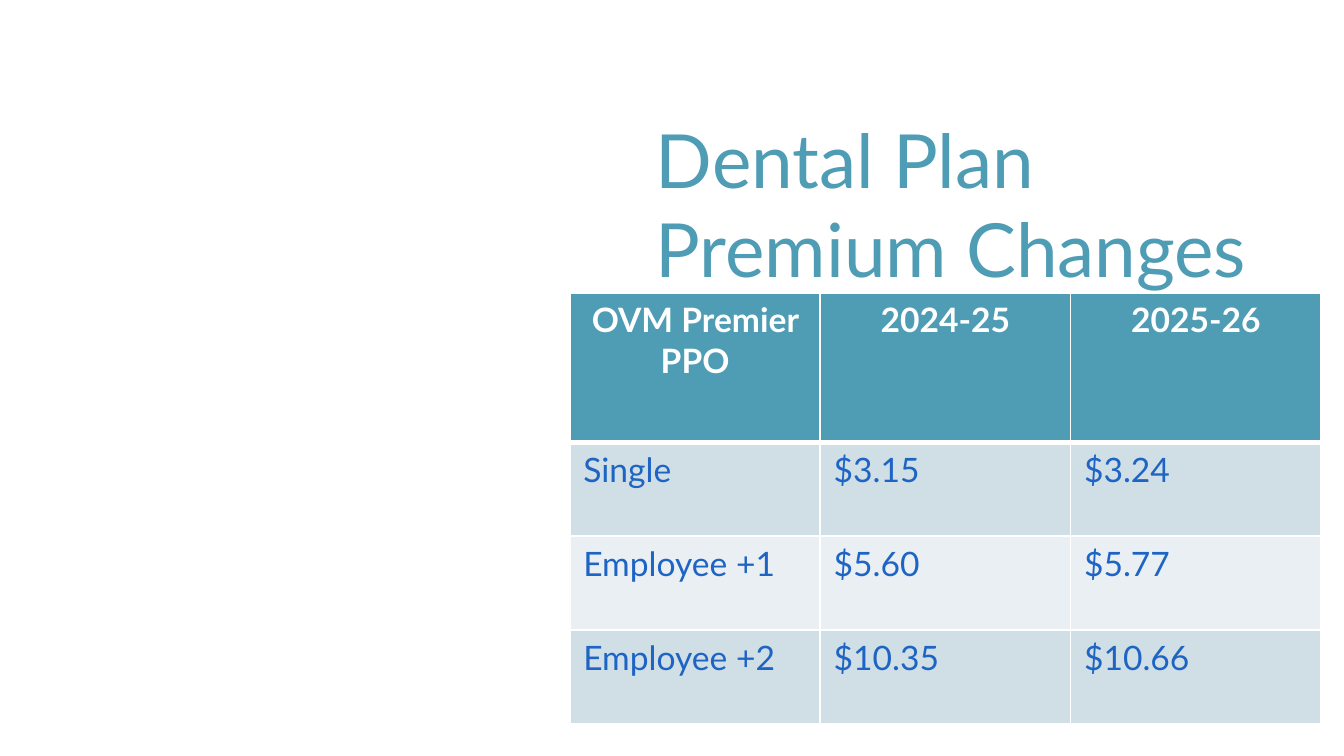
from dataclasses import dataclass

from lxml.etree import SubElement
from pptx import Presentation
from pptx.dml.color import RGBColor
from pptx.enum.text import MSO_ANCHOR, MSO_AUTO_SIZE, PP_ALIGN
from pptx.oxml.ns import qn
from pptx.util import Inches, Pt


@dataclass(frozen=True)
class Theme:
    """Colours, font and type sizes of the slide."""
    font: str = "Lato"
    teal: str = "4F9CB5"
    blue: str = "1D64C5"
    white: str = "FFFFFF"
    bands: tuple = ("D0DEE5", "E9EFF3")
    title: int = 40
    body: int = 18


THEME = Theme()
ROWS = [
    ("OVM Premier PPO", "2024-25", "2025-26"),
    ("Single", "$3.15", "$3.24"),
    ("Employee +1", "$5.60", "$5.77"),
    ("Employee +2", "$10.35", "$10.66"),
]


def style(par, size, color, bold=False, align=PP_ALIGN.LEFT):
    """Format a paragraph and its runs."""
    par.alignment = align
    for run in par.runs:
        font = run.font
        font.name, font.size, font.bold = THEME.font, Pt(size), bold
        font.color.rgb = RGBColor.from_string(color)


def edge(cell, side, width):
    """Draw a white border on one side of a cell."""
    line = SubElement(cell._tc.get_or_add_tcPr(), qn(f"a:ln{side}"), w=str(Pt(width)))
    fill = SubElement(line, qn("a:solidFill"))
    SubElement(fill, qn("a:srgbClr"), val=THEME.white)


def add_title(slide, left, top, width, height):
    """Place the slide title in its box."""
    shape = slide.shapes.title
    shape.left, shape.top = Inches(left), Inches(top)
    shape.width, shape.height = Inches(width), Inches(height)
    frame = shape.text_frame
    frame.text = "Dental Plan\vPremium Changes"
    frame.word_wrap = True
    frame.auto_size = MSO_AUTO_SIZE.NONE
    frame.vertical_anchor = MSO_ANCHOR.BOTTOM
    frame.margin_left = frame.margin_right = 0
    frame.margin_top = frame.margin_bottom = 0
    style(frame.paragraphs[0], THEME.title, THEME.teal)


def add_rates(slide, left, top, width, height, head):
    """Place the premium table, with a header of the given height."""
    table = slide.shapes.add_table(
        len(ROWS), len(ROWS[0]),
        Inches(left), Inches(top), Inches(width), Inches(height)).table
    step = (height - head) / (len(ROWS) - 1)
    for i, texts in enumerate(ROWS):
        first = i == 0
        table.rows[i].height = Inches(head if first else step)
        for j, text in enumerate(texts):
            cell = table.cell(i, j)
            cell.text_frame.text = text
            style(cell.text_frame.paragraphs[0], THEME.body,
                  THEME.white if first else THEME.blue, first,
                  PP_ALIGN.CENTER if first else PP_ALIGN.LEFT)
            for side in "LRTB":
                thick = (first and side == "B") or (i == 1 and side == "T")
                edge(cell, side, 3 if thick else 1)
            cell.fill.solid()
            color = THEME.teal if first else THEME.bands[(i - 1) % 2]
            cell.fill.fore_color.rgb = RGBColor.from_string(color)


def main():
    """Build and save the slide."""
    deck = Presentation()
    deck.slide_width = Inches(10)
    deck.slide_height = deck.slide_width * 9 // 16
    slide = deck.slides.add_slide(deck.slide_layouts.get_by_name("Title Only"))
    add_title(slide, 4.88, 0.91, 4.54, 1.27)
    add_rates(slide, 4.24, 2.18, 5.59, 3.21, 1.11)
    deck.save("out.pptx")


if __name__ == "__main__":
    main()
